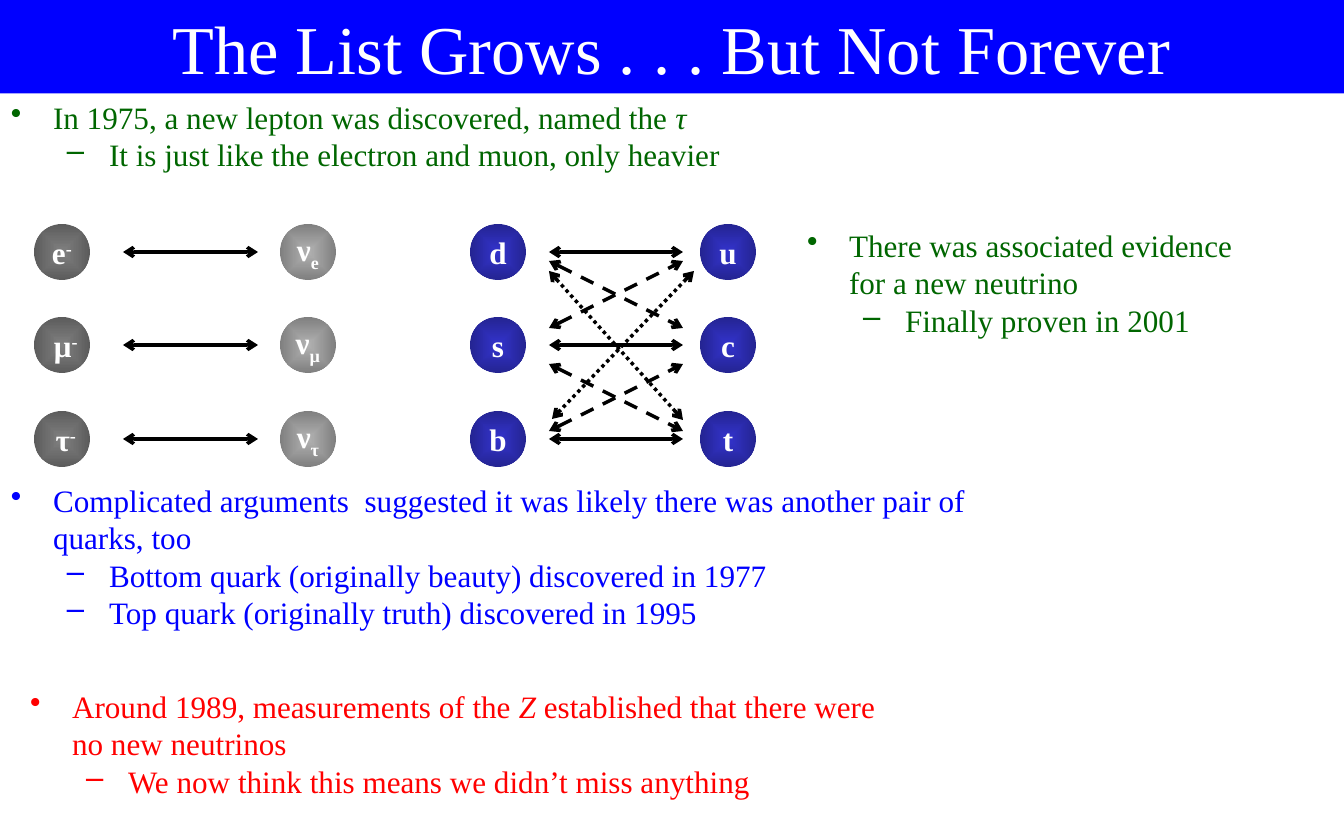
from dataclasses import dataclass

from lxml import etree
from pptx import Presentation
from pptx.dml.color import RGBColor
from pptx.enum.dml import MSO_LINE
from pptx.enum.shapes import MSO_CONNECTOR, MSO_SHAPE
from pptx.enum.text import MSO_ANCHOR, MSO_AUTO_SIZE, PP_ALIGN
from pptx.oxml.ns import qn
from pptx.util import Emu, Pt

OVAL = MSO_SHAPE.OVAL
STRAIGHT = MSO_CONNECTOR.STRAIGHT
DASH, DOT = MSO_LINE.DASH, MSO_LINE.ROUND_DOT
TOP, MIDDLE = MSO_ANCHOR.TOP, MSO_ANCHOR.MIDDLE
GROW, CENTER = MSO_AUTO_SIZE.SHAPE_TO_FIT_TEXT, PP_ALIGN.CENTER

TITLE_ONLY = 5
EMU_PER_PX = 914400 / 112


@dataclass(frozen=True)
class Theme:
    font: str = "Times New Roman"
    title_size: int = 44
    body_size: int = 20
    line_width: float = 2.25
    white: str = "FFFFFF"
    black: str = "000000"
    blue: str = "0000FF"
    green: str = "006600"
    red: str = "FF0000"
    lepton: tuple = ("808080", "5C5C5C")
    neutrino: tuple = ("B2B2B2", "7F7F7F")
    quark: tuple = ("3333CC", "242492")


THEME = Theme()

BALL = 56
FIRST_ROW, ROW_PITCH = 224, 280 / 3
LEPTON_X, NEUTRINO_X, DOWN_X, UP_X = 34, 280, 470, 700
LEPTON_ARROW = (123, 258)
QUARK_ARROW = (549, 683)
MARGINS, HANGING = (42, 98), 42
BULLETS = ("•", "–")
SUPERSCRIPT, SUBSCRIPT = 30000, -25000

FAMILIES = [
    ("e", "e", "d", "u"),
    (" μ", "µ", "s", "c"),
    (" τ", "τ", "b", "t"),
]


def px(length):
    return Emu(round(length * EMU_PER_PX))


def rgb(color):
    return RGBColor.from_string(color)


def add_span(para, text, color=THEME.white, size=THEME.body_size,
             bold=False, italic=False, baseline=0):
    span = para.add_run()
    span.text = text
    font = span.font
    font.name, font.size = THEME.font, Pt(size)
    font.bold, font.italic = bold, italic
    font.color.rgb = rgb(color)
    if baseline:
        font._element.set("baseline", str(baseline))


def add_title(page, text):
    title = page.shapes.title
    title.left, title.top, title.width, title.height = map(px, (0, 0, 1344, 93))
    title.fill.solid()
    title.fill.fore_color.rgb = rgb(THEME.blue)
    frame = title.text_frame
    frame.auto_size, frame.vertical_anchor = GROW, TOP
    para = frame.paragraphs[0]
    para.alignment = CENTER
    add_span(para, text, size=THEME.title_size)


def add_bullets(page, bounds, color, items):
    """Each item is a level and its spans; every second span is italic."""
    box = page.shapes.add_textbox(*map(px, bounds))
    frame = box.text_frame
    frame.word_wrap, frame.auto_size = True, GROW
    for index, (level, *spans) in enumerate(items):
        para = frame.add_paragraph() if index else frame.paragraphs[0]
        para.level = level
        properties = para._p.get_or_add_pPr()
        properties.set("marL", str(px(MARGINS[level])))
        properties.set("indent", str(px(-HANGING)))
        etree.SubElement(properties, qn("a:buChar")).set("char", BULLETS[level])
        for position, text in enumerate(spans):
            add_span(para, text, color=color, italic=position % 2 == 1)


def fill_from_center(shape, colors):
    shape.fill.gradient()
    for stop, color in zip(shape.fill.gradient_stops, colors):
        stop.color.rgb = rgb(color)
    gradient = shape._element.spPr.find(qn("a:gradFill"))
    radial = etree.Element(qn("a:path"))
    radial.set("path", "shape")
    center = etree.SubElement(radial, qn("a:fillToRect"))
    for side in "ltrb":
        center.set(side, "50000")
    gradient.replace(gradient.find(qn("a:lin")), radial)


def add_particle(page, left, top, colors, symbol, mark="", baseline=0):
    ball = page.shapes.add_shape(OVAL, px(left), px(top), px(BALL), px(BALL))
    ball.shadow.inherit = False
    ball.line.fill.background()
    fill_from_center(ball, colors)
    frame = ball.text_frame
    frame.word_wrap, frame.vertical_anchor = False, MIDDLE
    para = frame.paragraphs[0]
    para.alignment = CENTER
    add_span(para, symbol, bold=True)
    if mark:
        add_span(para, mark, bold=True, baseline=baseline)


def add_arrow(page, start, end, dash=None):
    """Draw a line with an open arrowhead at both ends."""
    arrow = page.shapes.add_connector(STRAIGHT, *map(px, (*start, *end)))
    arrow.line.color.rgb = rgb(THEME.black)
    arrow.line.width = Pt(THEME.line_width)
    if dash:
        arrow.line.dash_style = dash
    outline = arrow.line._get_or_add_ln()
    for tag in ("a:headEnd", "a:tailEnd"):
        etree.SubElement(outline, qn(tag)).set("type", "arrow")
    etree.SubElement(arrow._element.spPr, qn("a:effectLst"))


def add_families(page):
    for row, (lepton, flavor, down, up) in enumerate(FAMILIES):
        top = round(FIRST_ROW + row * ROW_PITCH)
        add_particle(page, LEPTON_X, top, THEME.lepton, lepton, "-", SUPERSCRIPT)
        add_particle(page, NEUTRINO_X, top, THEME.neutrino, "ν", flavor, SUBSCRIPT)
        add_particle(page, DOWN_X, top, THEME.quark, down)
        add_particle(page, UP_X, top, THEME.quark, up)
        middle = top + BALL // 2
        for left, right in (LEPTON_ARROW, QUARK_ARROW):
            add_arrow(page, (left, middle), (right, middle))


def add_quark_mixing(page):
    left, right = QUARK_ARROW
    for upper, lower in ((261, 328), (364, 431)):
        add_arrow(page, (left, upper), (right, lower), dash=DASH)
        add_arrow(page, (left, lower), (right, upper), dash=DASH)
    add_arrow(page, (left, 271), (right, 420), dash=DOT)
    add_arrow(page, (694, 271), (552, 419), dash=DOT)


def main():
    deck = Presentation()
    deck.slide_width, deck.slide_height = px(1344), px(840)
    page = deck.slides.add_slide(deck.slide_layouts[TITLE_ONLY])

    add_title(page, "The List Grows . . . But Not Forever")
    add_bullets(page, (0, 93, 1344, 86), THEME.green, [
        (0, "In 1975, a new lepton was discovered, named the", " τ"),
        (1, "It is just like the electron and muon, only heavier"),
    ])
    add_families(page)
    add_quark_mixing(page)
    add_bullets(page, (796, 221, 485, 124), THEME.green, [
        (0, "There was associated evidence for a new neutrino"),
        (1, "Finally proven in 2001"),
    ])
    add_bullets(page, (0, 476, 1008, 162), THEME.blue, [
        (0, "Complicated arguments  suggested it was likely "
            "there was another pair of quarks, too"),
        (1, "Bottom quark (originally beauty) discovered in 1977"),
        (1, "Top quark (originally truth) discovered in 1995"),
    ])
    add_bullets(page, (19, 682, 868, 124), THEME.red, [
        (0, "Around 1989, measurements of the ", "Z",
         " established that there were no new neutrinos"),
        (1, "We now think this means we didn’t miss anything"),
    ])
    deck.save("out.pptx")


if __name__ == "__main__":
    main()
